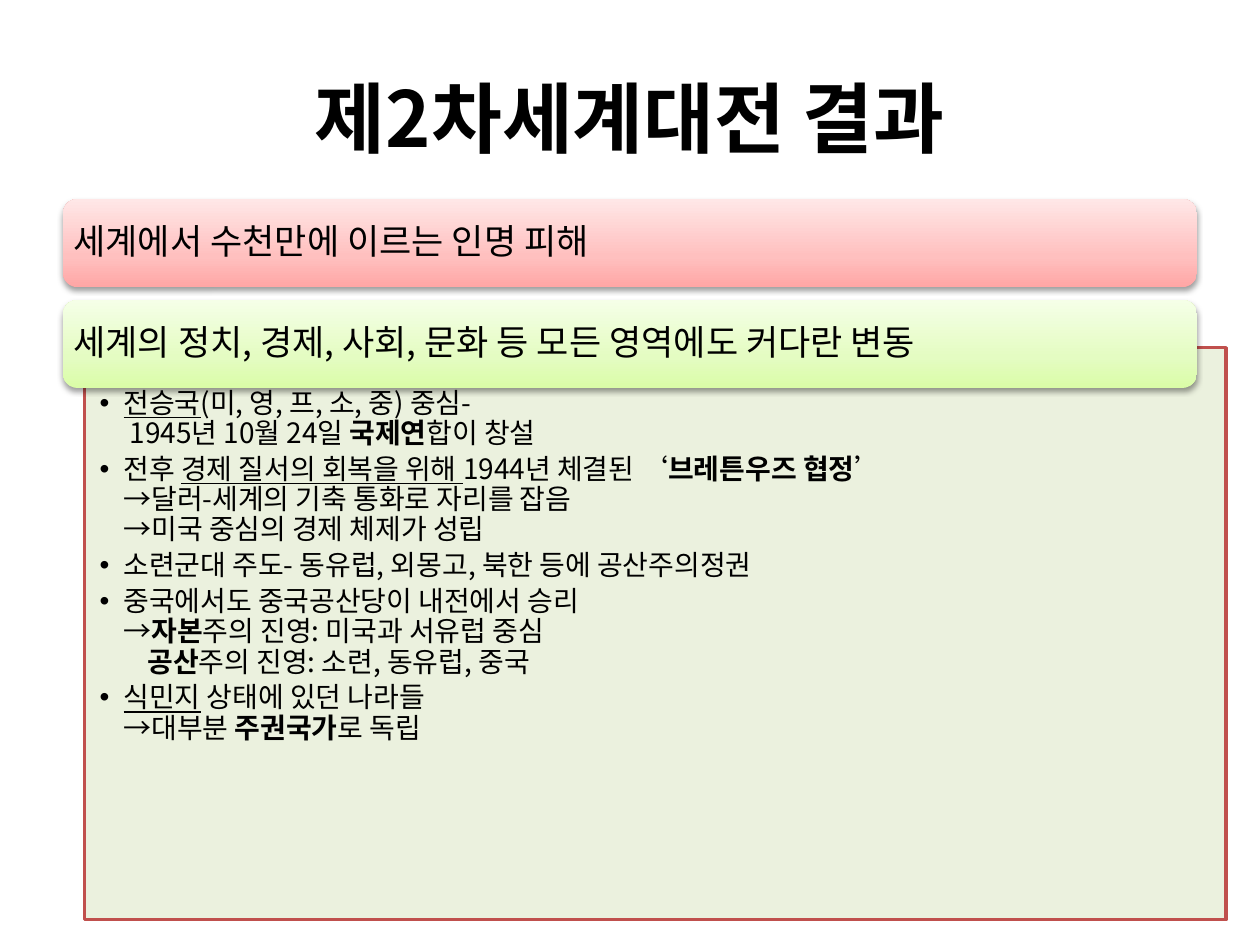
from copy import deepcopy

from pptx import Presentation
from pptx.dml.color import RGBColor
from pptx.enum.shapes import MSO_SHAPE
from pptx.enum.text import MSO_ANCHOR, MSO_AUTO_SIZE, PP_ALIGN
from pptx.oxml import parse_xml
from pptx.oxml.ns import nsdecls, qn
from pptx.util import Inches, Pt

FONT = "Noto Sans CJK KR"
BLACK = RGBColor(0x00, 0x00, 0x00)
PANEL_FILL = RGBColor(0xEB, 0xF1, 0xDE)
PANEL_LINE = RGBColor(0xC0, 0x50, 0x4D)
PINKS = [RGBColor(0xFF, 0xA6, 0xA5), RGBColor(0xFF, 0xC0, 0xBF), RGBColor(0xFF, 0xE7, 0xE7)]
GREENS = [RGBColor(0xDA, 0xFD, 0xA7), RGBColor(0xE4, 0xFC, 0xC2), RGBColor(0xF5, 0xFF, 0xE7)]
STOP_POSITIONS = [0, 0.35, 1]

HEADINGS = [
    ("세계에서 수천만에 이르는 인명 피해", PINKS),
    ("세계의 정치, 경제, 사회, 문화 등 모든 영역에도 커다란 변동", GREENS),
]
PLAIN, BOLD, UNDERLINE = "plain", "bold", "underline"
RESULTS = [
    [("전승국", UNDERLINE), ("(미, 영, 프, 소, 중) 중심-\n 1945년 10월 24일 ", PLAIN),
     ("국제연", BOLD), ("합이 창설", PLAIN)],
    [("전후 ", PLAIN), ("경제 질서의 회복을 위해 ", UNDERLINE), ("1944년 체결된 ‘", PLAIN),
     ("브레튼우즈 협정", BOLD),
     ("’\n→달러-세계의 기축 통화로 자리를 잡음\n→미국 중심의 경제 체제가 성립", PLAIN)],
    [("소련군대 주도- 동유럽, 외몽고, 북한 등에 공산주의정권", PLAIN)],
    [("중국에서도 중국공산당이 내전에서 승리\n→", PLAIN), ("자본", BOLD),
     ("주의 진영: 미국과 서유럽 중심", PLAIN)],
    [("공산", BOLD), ("주의 진영: 소련, 동유럽, 중국", PLAIN)],
    [("식민지", UNDERLINE), (" 상태에 있던 나라들\n→대부분 ", PLAIN),
     ("주권국가", BOLD), ("로 독립", PLAIN)],
]
CONTINUATION = 4


def place(element, left, top, width, height):
    element.left, element.top = Inches(left), Inches(top)
    element.width, element.height = Inches(width), Inches(height)


def set_margins(frame, left, top, right, bottom):
    frame.margin_left, frame.margin_top = Inches(left), Inches(top)
    frame.margin_right, frame.margin_bottom = Inches(right), Inches(bottom)


def style_run(run, size, bold=False, underline=False):
    font = run.font
    font.size, font.bold, font.underline = Pt(size), bold, underline
    font.color.rgb = BLACK
    font.name = FONT
    latin = font._element.find(qn("a:latin"))
    latin.addnext(parse_xml(f'<a:ea {nsdecls("a")} typeface="{FONT}"/>'))


def add_title(slide):
    title = slide.shapes.title
    place(title, 0.5, 0.3, 9, 1.25)
    frame = title.text_frame
    frame.text = "제2차세계대전 결과"
    frame.auto_size = MSO_AUTO_SIZE.NONE
    frame.vertical_anchor = MSO_ANCHOR.MIDDLE
    frame.paragraphs[0].alignment = PP_ALIGN.CENTER
    style_run(frame.paragraphs[0].runs[0], 44, bold=True)


def add_panel(slide):
    panel = slide.shapes.add_shape(
        MSO_SHAPE.RECTANGLE, Inches(0.67), Inches(2.76), Inches(9.06), Inches(4.54))
    panel.shadow.inherit = False
    panel.fill.solid()
    panel.fill.fore_color.rgb = PANEL_FILL
    panel.line.color.rgb = PANEL_LINE
    panel.line.width = Pt(2)
    slide.shapes._spTree.insert(2, panel._element)


def fill_gradient(shape, colors):
    shape.fill.gradient()
    shape.fill.gradient_angle = 90
    stop_list = shape._element.spPr.find(qn("a:gradFill")).find(qn("a:gsLst"))
    stop_list.append(deepcopy(stop_list[0]))
    for stop, position, color in zip(shape.fill.gradient_stops, STOP_POSITIONS, colors):
        stop.position = position
        stop.color.rgb = color


def add_soft_shadow(shape):
    shape.shadow.inherit = False
    shape._element.spPr.find(qn("a:effectLst")).append(parse_xml(
        f'<a:outerShdw {nsdecls("a")} blurRad="{Pt(3.1)}" dist="{Pt(1.6)}" dir="5400000" '
        'rotWithShape="0"><a:srgbClr val="000000"><a:alpha val="38000"/></a:srgbClr>'
        '</a:outerShdw>'))


def add_heading(slide, top, wording, colors):
    heading = slide.shapes.add_shape(
        MSO_SHAPE.ROUNDED_RECTANGLE, Inches(0.5), Inches(top), Inches(9), Inches(0.7))
    fill_gradient(heading, colors)
    heading.line.fill.background()
    add_soft_shadow(heading)
    frame = heading.text_frame
    frame.text = wording
    frame.word_wrap = True
    frame.vertical_anchor = MSO_ANCHOR.MIDDLE
    set_margins(frame, 0.05, 0.05, 0.05, 0.05)
    paragraph = frame.paragraphs[0]
    paragraph.alignment = PP_ALIGN.LEFT
    paragraph.line_spacing = 0.9
    paragraph.space_after = Pt(7)
    style_run(paragraph.runs[0], 20)


def set_bullet(paragraph, bulleted):
    properties = paragraph._p.get_or_add_pPr()
    properties.set("marL", str(Inches(0.19 if bulleted else 0.38)))
    properties.set("indent", str(Inches(-0.19 if bulleted else 0)))
    if bulleted:
        properties.append(parse_xml(f'<a:buFont {nsdecls("a")} typeface="Arial"/>'))
        properties.append(parse_xml(f'<a:buChar {nsdecls("a")} char="•"/>'))
    else:
        properties.append(parse_xml(f'<a:buNone {nsdecls("a")}/>'))


def add_phrase(paragraph, wording, emphasis):
    for number, line in enumerate(wording.split("\n")):
        if number:
            paragraph.add_line_break()
            line_break = paragraph._p.findall(qn("a:br"))[-1]
            line_break.append(deepcopy(run.font._element))
        run = paragraph.add_run()
        run.text = line
        style_run(run, 16, emphasis == BOLD, emphasis == UNDERLINE)


def add_results(slide):
    body = slide.placeholders[1]
    place(body, 0.5, 3.07, 9, 3.39)
    frame = body.text_frame
    frame.auto_size = MSO_AUTO_SIZE.NONE
    frame.vertical_anchor = MSO_ANCHOR.TOP
    set_margins(frame, 0.29, 0.02, 0.12, 0.02)
    for number, phrases in enumerate(RESULTS):
        paragraph = frame.add_paragraph() if number else frame.paragraphs[0]
        paragraph.level = 1
        set_bullet(paragraph, number != CONTINUATION)
        paragraph.line_spacing = 0.9
        paragraph.space_before = Pt(0)
        paragraph.space_after = Pt(0 if number + 1 == CONTINUATION else 3.2)
        for wording, emphasis in phrases:
            add_phrase(paragraph, wording, emphasis)


def main():
    presentation = Presentation()
    presentation.slide_width, presentation.slide_height = Inches(10), Inches(7.5)
    slide = presentation.slides.add_slide(presentation.slide_layouts[1])
    add_title(slide)
    add_panel(slide)
    for number, (wording, colors) in enumerate(HEADINGS):
        add_heading(slide, 1.58 + 0.8 * number, wording, colors)
    add_results(slide)
    presentation.save("out.pptx")


if __name__ == "__main__":
    main()
